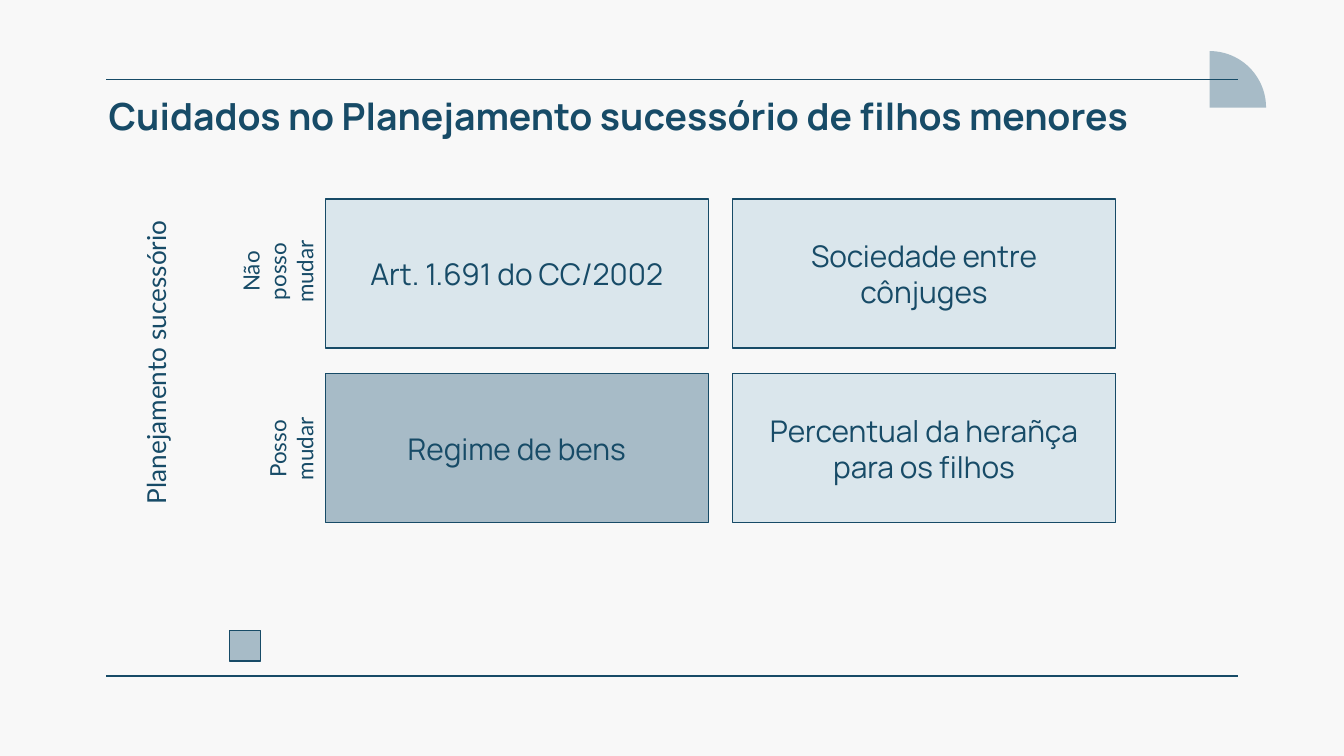
import pptx
import pptx.util
import pptx.dml.color
import pptx.enum.shapes
import pptx.enum.text
import pptx.oxml
import pptx.oxml.ns

Inches = pptx.util.Inches
RGBColor = pptx.dml.color.RGBColor
Shape = pptx.enum.shapes.MSO_SHAPE
Align = pptx.enum.text.PP_ALIGN
Anchor = pptx.enum.text.MSO_ANCHOR

BACKGROUND = RGBColor(0xF8, 0xF8, 0xF8)
NAVY = RGBColor(0x17, 0x4B, 0x67)
PALE_BLUE = RGBColor(0xDA, 0xE6, 0xEC)
GREY_BLUE = RGBColor(0xA7, 0xBB, 0xC7)

CARD_LEFT, CARD_TOP = 2.42, 1.48
CARD_WIDTH, CARD_HEIGHT = 2.85, 1.11
COLUMN_STEP, ROW_STEP = 3.03, 1.3
CARD_ROWS = [
    [("Art. 1.691 do CC/2002", PALE_BLUE), ("Sociedade entre cônjuges", PALE_BLUE)],
    [("Regime de bens", GREY_BLUE), ("Percentual da herañça para os filhos", PALE_BLUE)],
]


def write_text(box, text, size, font="Manrope", bold=False,
               align=Align.CENTER, anchor=Anchor.TOP):
    frame = box.text_frame
    frame.word_wrap = True
    frame.vertical_anchor = anchor
    frame.margin_left = frame.margin_right = Inches(0.1)
    frame.margin_top = frame.margin_bottom = Inches(0.1)
    para = frame.paragraphs[0]
    para.alignment = align
    span = para.add_run()
    span.text = text
    span.font.name = font
    span.font.size = pptx.util.Pt(size)
    span.font.bold = bold
    span.font.color.rgb = NAVY


def add_text(page, text, left, top, width, height, size, rotation=0, **style):
    box = page.shapes.add_textbox(
        Inches(left), Inches(top), Inches(width), Inches(height))
    box.rotation = rotation
    write_text(box, text, size, **style)


def add_block(page, kind, left, top, width, height, fill, outlined=True):
    block = page.shapes.add_shape(
        kind, Inches(left), Inches(top), Inches(width), Inches(height))
    block.shadow.inherit = False
    block.fill.solid()
    block.fill.fore_color.rgb = fill
    if outlined:
        block.line.color.rgb = NAVY
        block.line.width = pptx.util.Pt(0.75)
    else:
        block.line.fill.background()
    return block


def add_rule(page, top):
    """Draw a horizontal line across the content width."""
    rule = page.shapes.add_connector(
        pptx.enum.shapes.MSO_CONNECTOR.STRAIGHT,
        Inches(0.79), Inches(top), Inches(9.21), Inches(top))
    rule.line.color.rgb = NAVY
    rule.line.width = pptx.util.Pt(0.75)
    properties = rule._element.spPr
    properties.append(pptx.oxml.parse_xml(
        "<a:effectLst %s/>" % pptx.oxml.ns.nsdecls("a")))


def add_cards(page):
    for row, cards in enumerate(CARD_ROWS):
        for column, (text, fill) in enumerate(cards):
            card = add_block(
                page, Shape.RECTANGLE,
                CARD_LEFT + column * COLUMN_STEP, CARD_TOP + row * ROW_STEP,
                CARD_WIDTH, CARD_HEIGHT, fill)
            write_text(card, text, 16, anchor=Anchor.MIDDLE)


def main():
    deck = pptx.Presentation()
    deck.slide_width = Inches(10)
    deck.slide_height = Inches(10 * 9 / 16)
    page = deck.slides.add_slide(deck.slide_layouts[6])
    page.background.fill.solid()
    page.background.fill.fore_color.rgb = BACKGROUND

    quarter = add_block(page, Shape.PIE_WEDGE, 9, 0.38, 0.42, 0.42,
                        GREY_BLUE, outlined=False)
    quarter.rotation = 90
    for top in (0.59, 5.03):
        add_rule(page, top)
    add_text(page, "Cuidados no Planejamento sucessório de filhos menores",
             0.71, 0.59, 8.51, 0.56, 20, bold=True, align=Align.LEFT)

    add_cards(page)
    add_text(page, "Não posso mudar", 1.41, 1.82, 0.91, 0.4, 12,
             rotation=270, font="Lato")
    add_text(page, "Posso mudar", 1.61, 3.14, 0.91, 0.4, 12,
             rotation=270, font="Lato")
    add_text(page, "Planejamento sucessório", -0.02, 2.5, 2.4, 0.39, 14,
             rotation=270, font="Lato", anchor=Anchor.BOTTOM)
    add_block(page, Shape.RECTANGLE, 1.71, 4.69, 0.23, 0.23, GREY_BLUE)

    deck.save("out.pptx")


if __name__ == "__main__":
    main()
